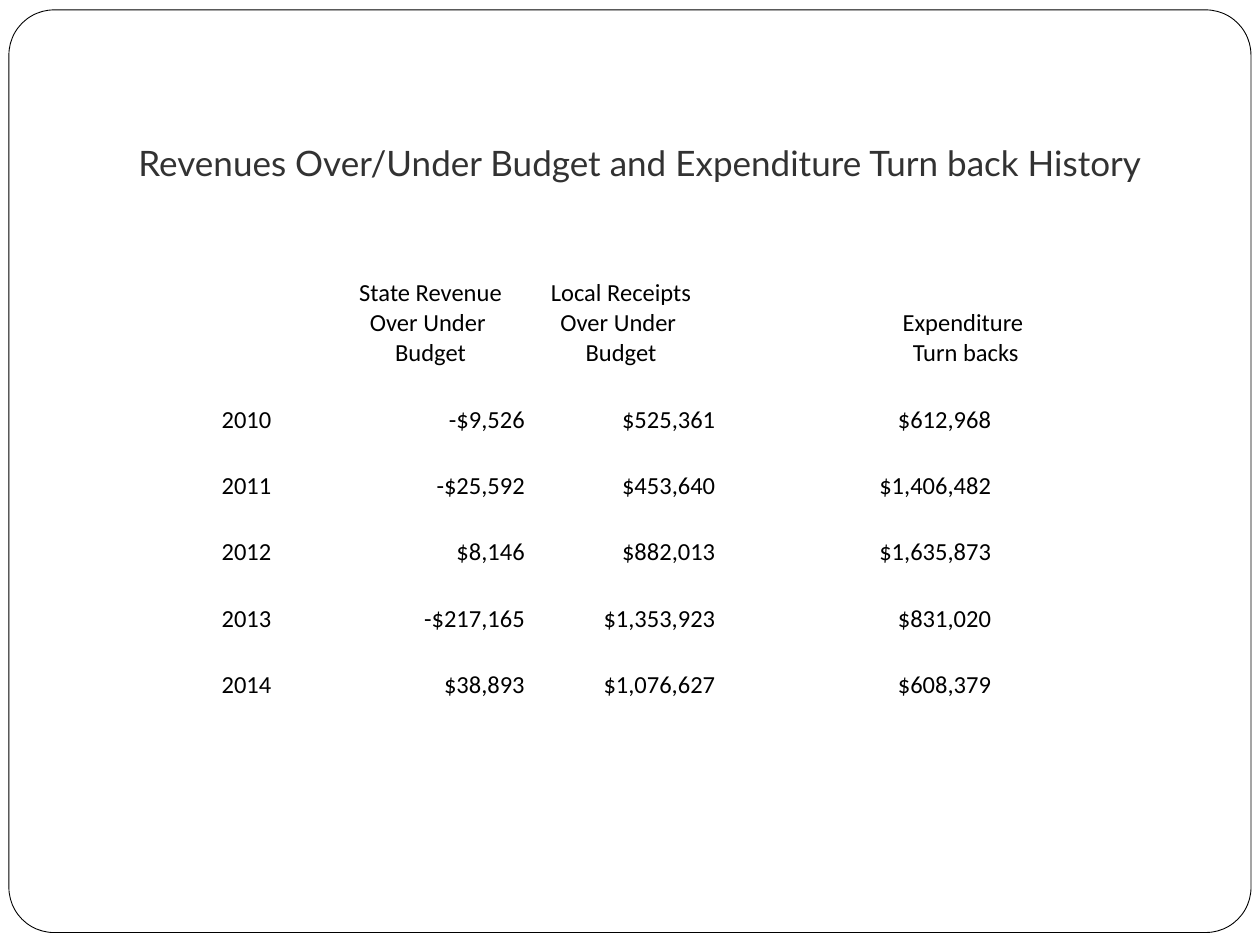
from pptx import Presentation
from pptx.dml.color import RGBColor
from pptx.enum.shapes import MSO_SHAPE
from pptx.enum.text import MSO_ANCHOR, PP_ALIGN
from pptx.util import Cm, Pt

BLACK = RGBColor(0x00, 0x00, 0x00)
WHITE = RGBColor(0xFF, 0xFF, 0xFF)
DARK_GRAY = RGBColor(0x32, 0x32, 0x32)

ROUNDED = MSO_SHAPE.ROUNDED_RECTANGLE
BOTTOM = MSO_ANCHOR.BOTTOM
LEFT, CENTER, RIGHT = PP_ALIGN.LEFT, PP_ALIGN.CENTER, PP_ALIGN.RIGHT

COLUMN_WIDTHS = [3.58, 3.84, 3.84, 2.49, 3.07, 2.01]
HEADER_HEIGHT = 2.34

# One list per table row; the fourth column is a gap
HISTORY = [
    ["", "State Revenue\nOver Under \nBudget", "Local Receipts\nOver Under \nBudget",
     "", "Expenditure \nTurn backs", ""],
    ["2010", "-$9,526", "$525,361", "", "$612,968", ""],
    ["2011", "-$25,592", "$453,640", "", "$1,406,482", ""],
    ["2012", "$8,146", "$882,013", "", "$1,635,873", ""],
    ["2013", "-$217,165", "$1,353,923", "", "$831,020", ""],
    ["2014", "$38,893", "$1,076,627", "", "$608,379", ""],
    [""] * len(COLUMN_WIDTHS),
]


def write(frame, text, font="Calibri", size=14, color=BLACK, align=LEFT):
    """Fill a text frame, one paragraph per line of text."""
    frame.text = text
    for paragraph in frame.paragraphs:
        paragraph.alignment = align
        paragraph.font.name = font
        paragraph.font.size = Pt(size)
        paragraph.font.bold = False
        paragraph.font.color.rgb = color


def add_frame(slide, left, top, width, height):
    border = slide.shapes.add_shape(ROUNDED, Cm(left), Cm(top), Cm(width), Cm(height))
    border.adjustments[0] = 0.049
    border.shadow.inherit = False
    border.fill.solid()
    border.fill.fore_color.rgb = WHITE
    border.line.color.rgb = BLACK
    border.line.width = Pt(0.5)


def add_title(slide, left, top, width, height):
    title = slide.shapes.add_textbox(Cm(left), Cm(top), Cm(width), Cm(height)).text_frame
    title.word_wrap = True
    title.vertical_anchor = BOTTOM
    title.margin_bottom = Cm(0.25)
    write(title, "Revenues Over/Under Budget and Expenditure Turn back History",
          font="Lato", size=20, color=DARK_GRAY)


def add_history_table(slide, left, top, width, height):
    history = slide.shapes.add_table(len(HISTORY), len(COLUMN_WIDTHS), Cm(left), Cm(top),
                                     Cm(width), Cm(height)).table
    history.first_row = False
    history.horz_banding = False

    # Column widths, and equal rows below the header
    for column, column_width in zip(history.columns, COLUMN_WIDTHS):
        column.width = Cm(column_width)
    year_height = (height - HEADER_HEIGHT) / (len(HISTORY) - 1)
    for index, row in enumerate(history.rows):
        row.height = Cm(year_height if index else HEADER_HEIGHT)

    # Cells: headings and years centred, amounts to the right
    for row_index, values in enumerate(HISTORY):
        for column_index, value in enumerate(values):
            cell = history.cell(row_index, column_index)
            cell.fill.background()
            cell.vertical_anchor = BOTTOM
            cell.margin_left = cell.margin_right = cell.margin_top = Cm(0.02)
            cell.margin_bottom = 0
            is_amount = row_index > 0 and column_index > 0
            write(cell.text_frame, value, align=RIGHT if is_amount else CENTER)

    # The expenditure heading covers the last two columns
    history.cell(0, 4).merge(history.cell(0, 5))


def main():
    presentation = Presentation()
    presentation.slide_width = Cm(25.4)
    presentation.slide_height = Cm(19.05)
    slide = presentation.slides.add_slide(presentation.slide_layouts[6])
    add_frame(slide, 0.18, 0.2, 25.04, 18.6)
    add_title(slide, 2.54, 0.76, 21.59, 3.18)
    add_history_table(slide, 3.18, 5.08, sum(COLUMN_WIDTHS), 10.38)
    presentation.save("out.pptx")


if __name__ == "__main__":
    main()
